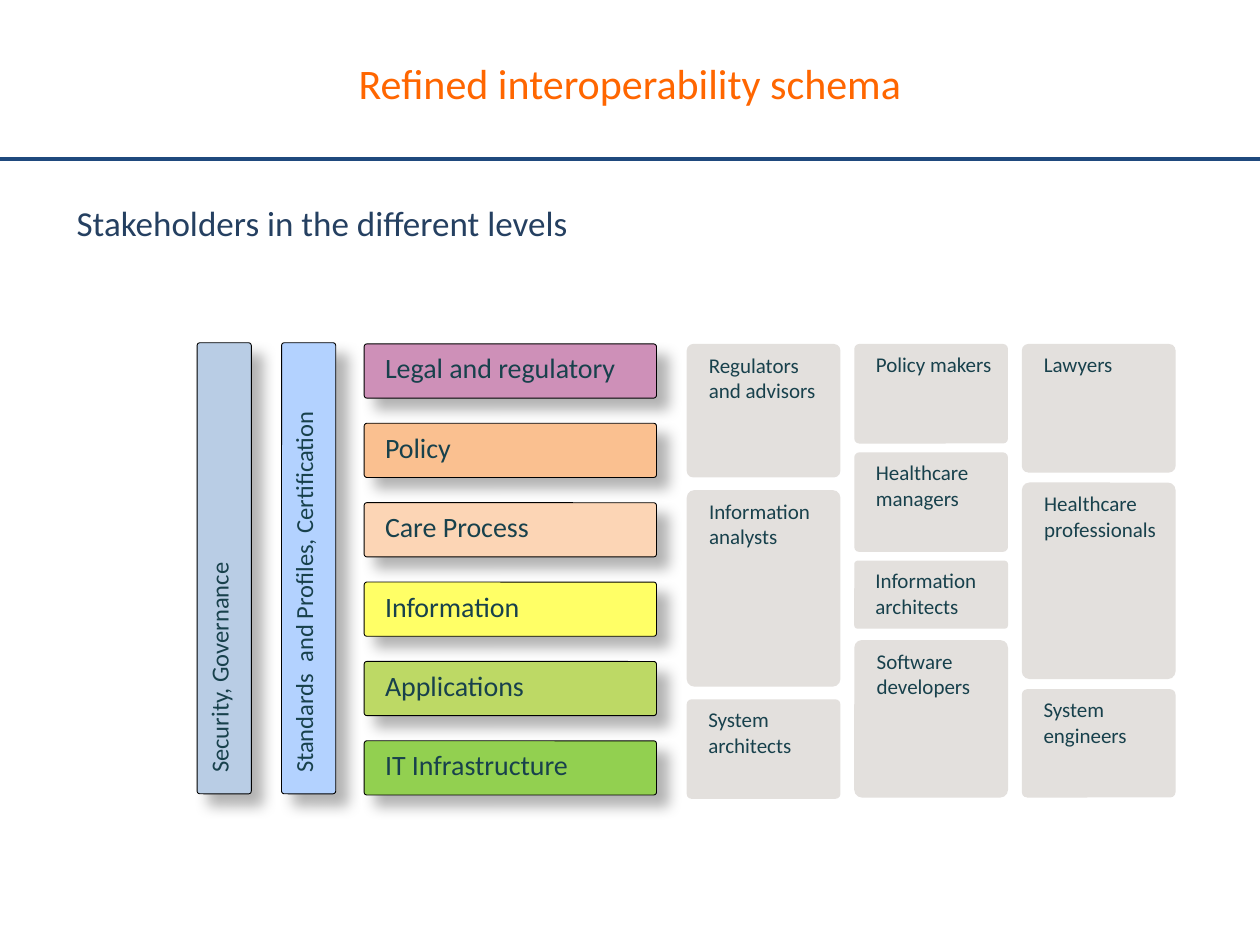
from dataclasses import dataclass

from lxml.etree import SubElement
from pptx import Presentation
from pptx.dml.color import RGBColor
from pptx.enum.shapes import MSO_CONNECTOR as Connector, MSO_SHAPE as Shape
from pptx.enum.text import MSO_ANCHOR as Anchor, PP_ALIGN as Align
from pptx.oxml.ns import qn
from pptx.util import Inches, Pt


@dataclass(frozen=True)
class Theme:
    font: str = "Calibri"
    title: str = "FF6600"
    heading: str = "254061"
    text: str = "18414C"
    rule: str = "1F497D"
    outline: str = "000000"
    role: str = "E3E0DD"
    title_size: int = 24
    heading_size: int = 20
    level_size: int = 16
    pillar_size: int = 14
    role_size: int = 12


class SchemaSlide:
    def __init__(self, slide, theme):
        self.slide = slide
        self.theme = theme

    def set_text(self, frame, text, size, color, align=Align.LEFT, anchor=Anchor.TOP):
        frame.text = text
        frame.word_wrap = True
        frame.vertical_anchor = anchor
        paragraph = frame.paragraphs[0]
        paragraph.alignment = align
        font = paragraph.runs[0].font
        font.name = self.theme.font
        font.size = Pt(size)
        font.color.rgb = RGBColor.from_string(color)

    def title(self, text, left, top, width, height):
        heading = self.slide.shapes.title
        heading.left, heading.top = Inches(left), Inches(top)
        heading.width, heading.height = Inches(width), Inches(height)
        self.set_text(heading.text_frame, text, self.theme.title_size,
                      self.theme.title, Align.CENTER, Anchor.MIDDLE)

    def subtitle(self, text, left, top, width, height):
        box = self.slide.shapes.add_textbox(
            Inches(left), Inches(top), Inches(width), Inches(height))
        self.set_text(box.text_frame, text, self.theme.heading_size,
                      self.theme.heading)

    def rule(self, top, width):
        line = self.slide.shapes.add_connector(
            Connector.STRAIGHT, 0, Inches(top), Inches(width), Inches(top))
        line.line.color.rgb = RGBColor.from_string(self.theme.rule)
        line.line.width = Pt(2.25)
        SubElement(line._element.spPr, qn("a:effectLst"))

    def card(self, text, left, top, width, height, fill, size):
        card = self.slide.shapes.add_shape(
            Shape.ROUNDED_RECTANGLE,
            Inches(left), Inches(top), Inches(width), Inches(height))
        card.adjustments[0] = 0.05
        card.shadow.inherit = False
        card.fill.solid()
        card.fill.fore_color.rgb = RGBColor.from_string(fill)
        card.line.fill.background()
        frame = card.text_frame
        frame.margin_left, frame.margin_right = Inches(0.16), Inches(0.1)
        frame.margin_top = frame.margin_bottom = Inches(0.05)
        self.set_text(frame, text, size, self.theme.text)
        return card

    def raised_card(self, text, left, top, width, height, fill, size):
        card = self.card(text, left, top, width, height, fill, size)
        card.line.color.rgb = RGBColor.from_string(self.theme.outline)
        card.line.width = Pt(0.5)
        effects = card._element.spPr.find(qn("a:effectLst"))
        shadow = SubElement(effects, qn("a:outerShdw"), blurRad=str(Pt(8)),
                            dist=str(Pt(9)), dir="2700000", algn="tl",
                            rotWithShape="0")
        color = SubElement(shadow, qn("a:srgbClr"), val=self.theme.outline)
        SubElement(color, qn("a:alpha"), val="30000")
        return card

    def pillar(self, text, center, middle, length, thickness, fill):
        pillar = self.raised_card(text, center - length / 2, middle - thickness / 2,
                                  length, thickness, fill, self.theme.pillar_size)
        pillar.rotation = 270


LEVELS = [
    ("Legal and regulatory", "CE90B8"),
    ("Policy", "FAC090"),
    ("Care Process", "FCD5B5"),
    ("Information", "FFFF66"),
    ("Applications", "BDD965"),
    ("IT Infrastructure", "92D050"),
]
PILLARS = [
    ("Security, Governance", 1.78, "B9CDE5"),
    ("Standards  and Profiles, Certification", 2.45, "B3D2FF"),
]
STAKEHOLDERS = [
    [("Regulators and advisors", 2.73, 1.06),
     ("Information analysts", 3.89, 1.56),
     ("System architects", 5.55, 0.79)],
    [("Policy makers", 2.73, 0.79),
     ("Healthcare managers", 3.59, 0.79),
     ("Information architects", 4.45, 0.54),
     ("Software developers", 5.08, 1.25)],
    [("Lawyers", 2.73, 1.02),
     ("Healthcare professionals", 3.83, 1.56),
     ("System engineers", 5.47, 0.86)],
]


def main():
    theme = Theme()
    deck = Presentation()
    deck.slide_width, deck.slide_height = Inches(10), Inches(7.5)
    title_only = deck.slide_layouts[5]
    schema = SchemaSlide(deck.slides.add_slide(title_only), theme)

    schema.rule(1.26, 10)
    schema.title("Refined interoperability schema", 2.36, 0.26, 5.28, 0.79)
    schema.subtitle("Stakeholders in the different levels", 0.51, 1.55, 8.5, 0.47)

    for row, (level, fill) in enumerate(LEVELS):
        schema.raised_card(level, 2.89, 2.73 + 0.63 * row, 2.32, 0.43,
                           fill, theme.level_size)
    for concern, center, fill in PILLARS:
        schema.pillar(concern, center, 4.51, 3.58, 0.43, fill)
    for column, roles in enumerate(STAKEHOLDERS):
        for role, top, height in roles:
            schema.card(role, 5.45 + 1.33 * column, top, 1.22, height,
                        theme.role, theme.role_size)

    deck.save("out.pptx")


if __name__ == "__main__":
    main()
